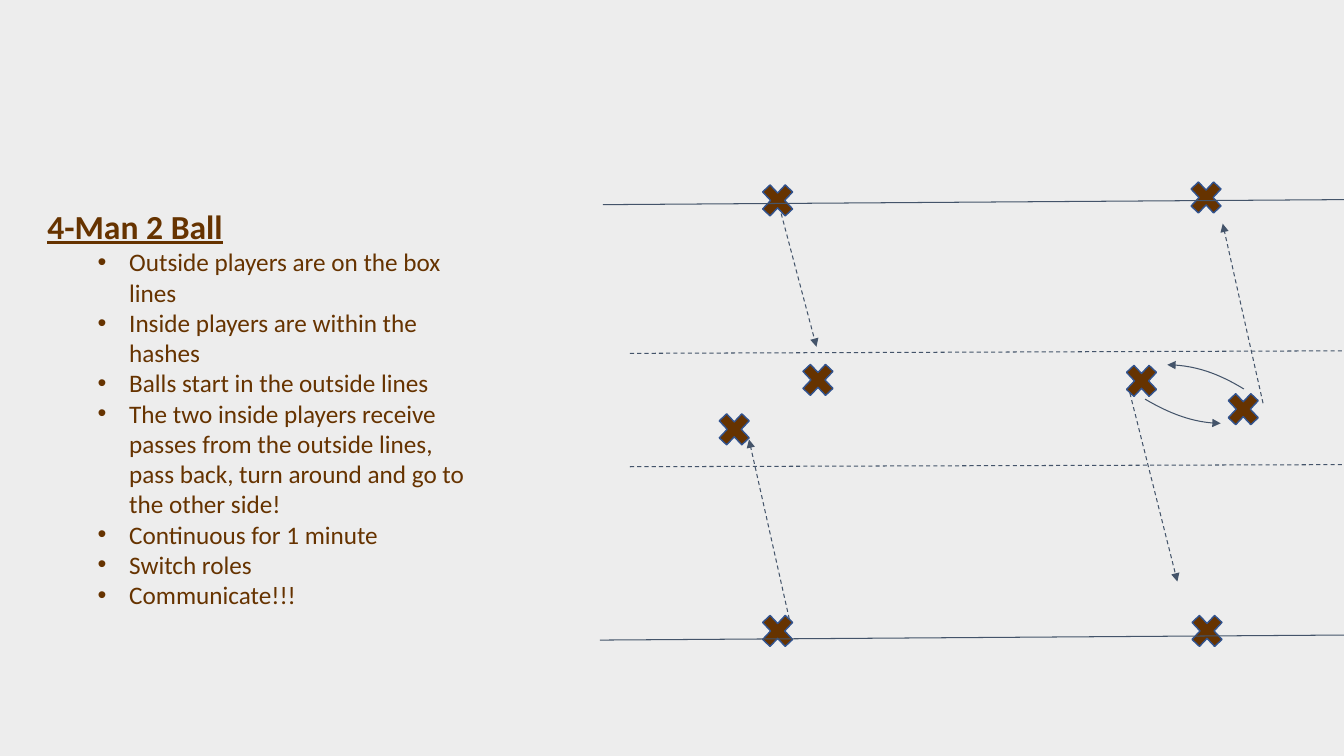
"""Build the 4-Man 2 Ball passing drill slide."""
from lxml import etree
from pptx import Presentation
from pptx.dml.color import RGBColor
from pptx.enum import dml, shapes, text
from pptx.oxml import ns
from pptx.util import Pt

BROWN = RGBColor(0x66, 0x33, 0x00)
OUTLINE = RGBColor(0x31, 0x53, 0x8F)
SLATE = RGBColor(0x44, 0x54, 0x6A)
GRAY = RGBColor(0xED, 0xED, 0xED)

TITLE = "4-Man 2 Ball"
RULES = [
    "Outside players are on the box lines",
    "Inside players are within the hashes",
    "Balls start in the outside lines",
    "The two inside players receive passes from the outside lines, "
    "pass back, turn around and go to the other side!",
    "Continuous for 1 minute",
    "Switch roles",
    "Communicate!!!",
]
PLAYER_W, PLAYER_H = 31, 33
PLAYERS = [(540, 126.7), (509, 290.2), (568.8, 254.9), (540, 434.2),
           (846, 124.6), (846.7, 434.2), (872.6, 275.8), (799.9, 255.6)]
PASSES = [((558, 152.6), (583.2, 247.7)), ((563.8, 442.1), (535, 313.9)),
          ((807.1, 280.8), (841, 415.4)), ((902.2, 288), (873.4, 159.8))]
TURNS = [[(817.9, 285.1), (833.8, 294.5), (853.2, 302.4), (871.9, 302.4)],
         [(888.5, 277.9), (871.9, 267.8), (853.2, 260.6), (833.8, 260.6)]]
BOX_LINES = [((430.6, 146.2), (960, 142.6)), ((428.4, 457.2), (960, 453.6))]
HASHES = [((450, 252.4), (960, 250.6)), ((450, 333.4), (960, 331.9))]

LEFT, TOP, WIDTH = 26.6, 143.3, 324.7
TITLE_H, BODY_H = 32.9, 265
INSET = 7.2


def style_line(line, dashed=False, arrow=False):
    line.color.rgb = SLATE
    line.width = Pt(0.75)
    if dashed:
        line.dash_style = dml.MSO_LINE.DASH
    if arrow:
        ln = line._get_or_add_ln()
        etree.SubElement(ln, ns.qn("a:tailEnd"), type="triangle")


def add_line(s, start, end, dashed=False, arrow=False):
    x1, y1, x2, y2 = map(Pt, start + end)
    c = s.shapes.add_connector(shapes.MSO_CONNECTOR.STRAIGHT, x1, y1, x2, y2)
    etree.SubElement(c._element.spPr, ns.qn("a:effectLst"))
    style_line(c.line, dashed, arrow)


def add_turn(s, points):
    start, *rest = [(Pt(x), Pt(y)) for x, y in points]
    fb = s.shapes.build_freeform(*start)
    fb.add_line_segments(rest, close=False)
    sp = fb.convert_to_shape()
    segments = list(sp._element.iter(ns.qn("a:lnTo")))
    curve = etree.SubElement(segments[0].getparent(), ns.qn("a:cubicBezTo"))
    for segment in segments:
        curve.append(segment[0])
        segment.getparent().remove(segment)
    sp.shadow.inherit = False
    sp.fill.background()
    style_line(sp.line, arrow=True)


def add_player(s, x, y):
    sp = s.shapes.add_shape(shapes.MSO_SHAPE.MATH_MULTIPLY,
                            Pt(x), Pt(y), Pt(PLAYER_W), Pt(PLAYER_H))
    sp.adjustments[0] = 0.235
    sp.shadow.inherit = False
    sp.fill.solid()
    sp.fill.fore_color.rgb = BROWN
    sp.line.color.rgb = OUTLINE
    sp.line.width = Pt(1)


def place_text(sp, top, height, inset_top, content, size):
    sp.left, sp.top, sp.width, sp.height = map(Pt, (LEFT, top, WIDTH, height))
    tf = sp.text_frame
    tf.text = content
    tf.word_wrap = True
    tf.auto_size = text.MSO_AUTO_SIZE.NONE
    tf.vertical_anchor = text.MSO_ANCHOR.TOP
    tf.margin_left = tf.margin_right = Pt(INSET)
    tf.margin_top, tf.margin_bottom = Pt(inset_top), Pt(0)
    for p in tf.paragraphs:
        p.alignment = text.PP_ALIGN.LEFT
        p.line_spacing = 1.0
        p.space_before = p.space_after = Pt(0)
        for r in p.runs:
            r.font.name = "Calibri"
            r.font.size = Pt(size)
            r.font.color.rgb = BROWN
    return tf


def add_bullet(p):
    p.level = 1
    pPr = p._p.get_or_add_pPr()
    pPr.set("marL", str(Pt(58.5)))
    pPr.set("indent", str(Pt(-22.5)))
    color = etree.SubElement(pPr, ns.qn("a:buClr"))
    etree.SubElement(color, ns.qn("a:srgbClr"), val=str(BROWN))
    etree.SubElement(pPr, ns.qn("a:buFont"), typeface="Arial")
    etree.SubElement(pPr, ns.qn("a:buChar"), char="•")


def main():
    prs = Presentation()
    prs.slide_width, prs.slide_height = Pt(960), Pt(540)
    s = prs.slides.add_slide(prs.slide_layouts[1])
    s.background.fill.solid()
    s.background.fill.fore_color.rgb = GRAY

    title, body = s.placeholders
    tf = place_text(title, TOP, TITLE_H, 3.6, TITLE, 24)
    font = tf.paragraphs[0].runs[0].font
    font.bold = font.underline = True
    tf = place_text(body, TOP + TITLE_H, BODY_H, 0, "\n".join(RULES), 18)
    for p in tf.paragraphs:
        add_bullet(p)

    for x, y in PLAYERS:
        add_player(s, x, y)
    for start, end in PASSES:
        add_line(s, start, end, dashed=True, arrow=True)
    for points in TURNS:
        add_turn(s, points)
    for start, end in BOX_LINES:
        add_line(s, start, end)
    for start, end in HASHES:
        add_line(s, start, end, dashed=True)

    prs.save("out.pptx")


if __name__ == "__main__":
    main()
